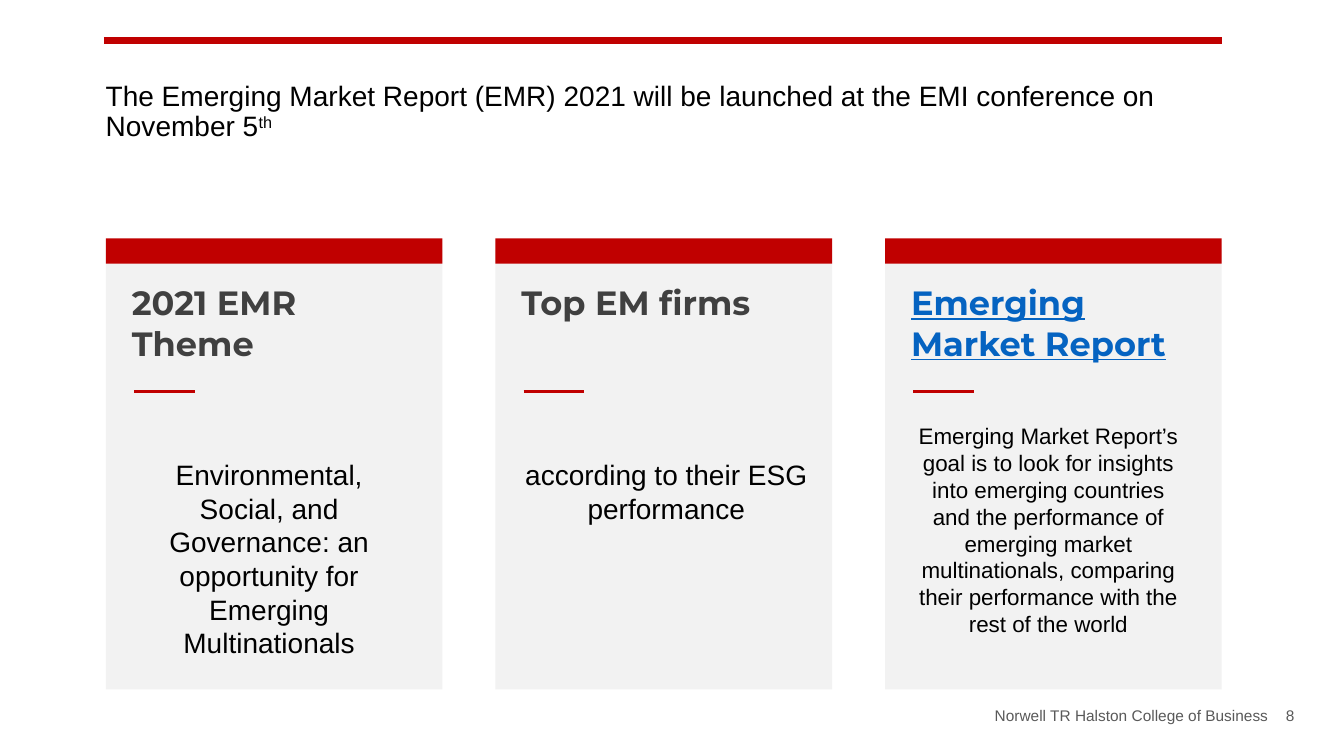
from dataclasses import dataclass

from lxml.etree import SubElement
from pptx import Presentation
from pptx.dml.color import RGBColor
from pptx.enum.shapes import MSO_CONNECTOR, MSO_SHAPE
from pptx.enum.text import MSO_AUTO_SIZE, PP_ALIGN
from pptx.oxml.ns import qn
from pptx.util import Inches, Pt


@dataclass(frozen=True)
class Theme:
    red: str = "C00000"
    panel: str = "F2F2F2"
    ink: str = "000000"
    heading: str = "404040"
    link: str = "0563C1"
    muted: str = "595959"
    body_font: str = "Arial"
    heading_font: str = "Montserrat"
    large: int = 20
    medium: int = 16
    heading_size: int = 24
    small: int = 11
    top_rule: float = 5
    card_rule: float = 2.25


class ReportSlide:
    COLUMNS, ROWS = 160, 90

    def __init__(self, deck, theme):
        self.theme = theme
        self.slide = deck.slides.add_slide(deck.slide_layouts[6])
        self.column = deck.slide_width / self.COLUMNS
        self.row = deck.slide_height / self.ROWS

    def place(self, left, top, width, height):
        return (round(left * self.column), round(top * self.row),
                round(width * self.column), round(height * self.row))

    def block(self, area, color):
        panel = self.slide.shapes.add_shape(MSO_SHAPE.RECTANGLE, *self.place(*area))
        panel.shadow.inherit = False
        panel.fill.solid()
        panel.fill.fore_color.rgb = RGBColor.from_string(color)
        panel.line.fill.background()

    def rule(self, left, right, top, weight):
        x, y, length, _ = self.place(left, top, right - left, 0)
        rule = self.slide.shapes.add_connector(MSO_CONNECTOR.STRAIGHT, x, y, x + length, y)
        rule.line.color.rgb = RGBColor.from_string(self.theme.red)
        rule.line.width = Pt(weight)
        SubElement(rule._element.spPr, qn("a:effectLst"))

    def text(self, area, wording, color, paragraph_format=None, superscript="",
             fit=MSO_AUTO_SIZE.NONE, **font_format):
        frame = self.slide.shapes.add_textbox(*self.place(*area)).text_frame
        frame.word_wrap = True
        frame.auto_size = fit
        paragraph = frame.paragraphs[0]
        for name, value in (paragraph_format or {}).items():
            setattr(paragraph, name, value)
        font_format = {"name": self.theme.body_font, **font_format}
        for part in filter(None, (wording, superscript)):
            run = paragraph.add_run()
            run.text = part
            for name, value in font_format.items():
                setattr(run.font, name, Pt(value) if name == "size" else value)
            run.font.color.rgb = RGBColor.from_string(color)
        if superscript:
            run.font._element.set("baseline", "30000")

    def card(self, left, heading, heading_rows, heading_color, underline,
             body, body_area, body_size):
        theme = self.theme
        offset, top, width, height = body_area
        self.block((left, 29.76, 40.08, 52.32), theme.panel)
        self.text((left + 1.92, 33, 36.36, heading_rows), heading, heading_color,
                  fit=MSO_AUTO_SIZE.SHAPE_TO_FIT_TEXT, name=theme.heading_font,
                  size=theme.heading_size, bold=True, underline=underline)
        self.block((left, 28.38, 40.08, 3), theme.red)
        self.text((left + offset, top, width, height), body, theme.ink,
                  {"alignment": PP_ALIGN.CENTER},
                  fit=MSO_AUTO_SIZE.SHAPE_TO_FIT_TEXT, size=body_size)
        self.rule(left + 3.36, left + 10.56, 46.56, theme.card_rule)


def main():
    deck = Presentation()
    deck.slide_width, deck.slide_height = Inches(13.33), Inches(7.5)
    theme = Theme()
    report = ReportSlide(deck, theme)

    report.rule(12.36, 145.44, 4.8, theme.top_rule)
    report.text((11.4, 9.24, 134.4, 8.88),
                "The Emerging Market Report (EMR) 2021 will be launched at the EMI "
                "conference on November 5",
                theme.ink, {"line_spacing": 0.9}, superscript="th", size=theme.large)

    cards = [
        ("2021 EMR Theme", 10.92, theme.heading, False,
         "Environmental, Social, and Governance: an opportunity for Emerging Multinationals",
         (1.92, 53.88, 35.04, 25.44), theme.large),
        ("Top EM firms", 6, theme.heading, False,
         "according to their ESG performance",
         (0.6, 53.88, 39.48, 9.24), theme.large),
        ("Emerging Market Report", 10.92, theme.link, True,
         "Emerging Market Report’s goal is to look for insights into emerging countries "
         "and the performance of emerging market multinationals, comparing their "
         "performance with the rest of the world",
         (1.92, 49.68, 35.04, 27.12), theme.medium),
    ]
    for position, content in enumerate(cards):
        report.card(12.6 + 46.38 * position, *content)

    footer = [((53, 83.52, 99.2, 4.8), "Norwell TR Halston College of Business"),
              ((150.3, 83.52, 5, 4.8), "8")]
    for area, wording in footer:
        report.text(area, wording, theme.muted, {"alignment": PP_ALIGN.RIGHT},
                    size=theme.small)

    deck.save("out.pptx")


if __name__ == "__main__":
    main()
